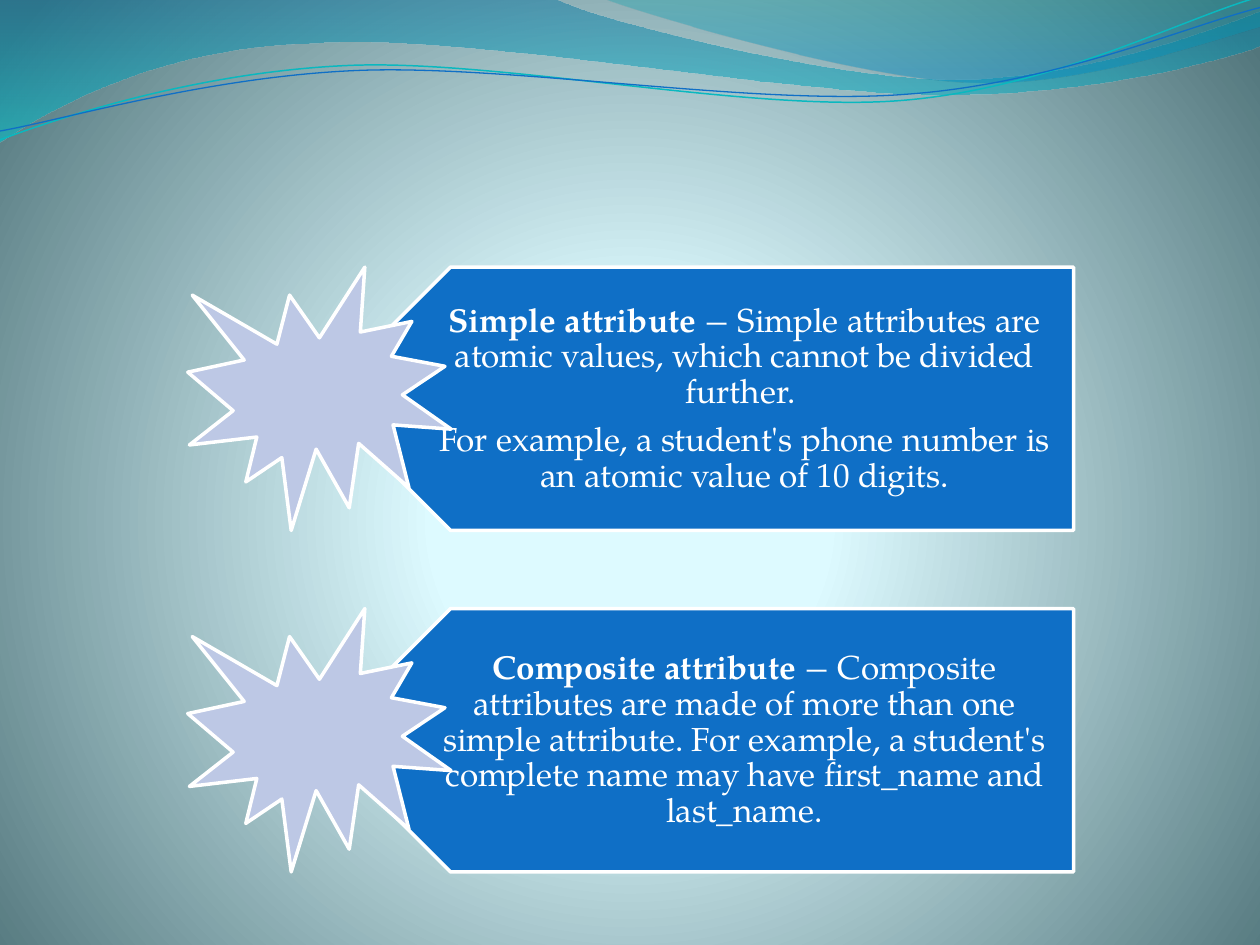
from lxml.etree import SubElement
from pptx import Presentation
from pptx.dml.color import RGBColor
from pptx.enum.shapes import MSO_SHAPE
from pptx.enum.text import MSO_ANCHOR, PP_ALIGN
from pptx.oxml import parse_xml
from pptx.oxml.ns import nsdecls, qn
from pptx.util import Inches, Pt

COLORS = {
    "plate": "0F6FC6", "seal": "BDC8E5", "white": "FFFFFF",
    "teal_line": "0AB8BF", "blue_line": "0F6FC6",
}
FONT = "TeX Gyre Pagella"


def set_gradient(parent, stops, direction):
    """Replace the solid fill in parent; stops are (position %, colour, opacity %)."""
    gradient = parse_xml(f'<a:gradFill {nsdecls("a")} rotWithShape="1"><a:gsLst/>{direction}</a:gradFill>')
    for position, color, opacity in stops:
        stop = SubElement(gradient[0], qn("a:gs"), pos=str(position * 1000))
        rgb = SubElement(stop, qn("a:srgbClr"), val=color)
        if opacity < 100:
            SubElement(rgb, qn("a:alpha"), val=str(opacity * 1000))
    parent.replace(parent.find(qn("a:solidFill")), gradient)


def add_wave(start, segments, close):
    """Segments hold one point for a straight line, three for a Bézier curve."""
    points = [start] + [point for segment in segments for point in segment]
    points = [(Inches(x), Inches(y)) for x, y in points]
    builder = page.shapes.build_freeform(*points[0], scale=1.0)
    builder.add_line_segments(points[1:], close=False)
    wave = builder.convert_to_shape()
    wave.shadow.inherit = False

    # Join each run of three straight steps into one curve
    outline = next(wave._element.iter(qn("a:path")))
    steps = iter(outline.findall(qn("a:lnTo")))
    for segment in segments:
        parts = [next(steps) for _ in segment]
        if len(parts) == 3:
            curve = SubElement(outline, qn("a:cubicBezTo"))
            outline.replace(parts[0], curve)
            for part in parts:
                curve.append(part[0])
            for part in parts[1:]:
                outline.remove(part)
    if close:
        SubElement(outline, qn("a:close"))
    return wave


deck = Presentation()
deck.slide_width, deck.slide_height = Inches(10), Inches(7.5)
page = deck.slides.add_slide(deck.slide_layouts[6])

page.background.fill.solid()
page.background.fill.fore_color.rgb = RGBColor.from_string(COLORS["white"])
set_gradient(
    page.background._cSld.bg.bgPr,
    [(0, "DEFBFF", 100), (25, "DDFAFF", 100), (100, "52767C", 100)],
    '<a:path path="circle"><a:fillToRect l="10000" t="110000" r="10000" b="100000"/></a:path>',
)

# Translucent bands across the top
bands = [
    ((0, 0), [
        [(4.4, -0.01)],
        [(4.76, 0.17), (6.64, 0.63), (7.58, 0.63)],
        [(8.53, 0.63), (9.58, 0.26), (10, 0.09)],
        [(10.01, 0.36)],
        [(9.83, 0.44), (8.7, 0.76), (7.46, 0.75)],
        [(6.22, 0.75), (3.82, 0.28), (2.57, 0.34)],
        [(1.29, 0.36), (0.46, 0.83), (-0.01, 1.13)],
        [(0, 0)],
    ], [(0, "0074A1", 45), (100, "00C6CF", 55)]),
    ((4.79, -0.01), [
        [(5.09, 0.11), (6.82, 0.62), (7.69, 0.65)],
        [(8.56, 0.69), (9.61, 0.32), (10, 0.21)],
        [(10, 0)],
        [(4.79, -0.01)],
    ], [(0, "00A1A9", 30), (80, "008BBF", 45)]),
]
for start, segments, stops in bands:
    band = add_wave(start, segments, close=True)
    band.line.fill.background()
    band.fill.solid()
    set_gradient(band._element.spPr, stops, '<a:lin ang="5400000" scaled="1"/>')

# Thin lines that follow the bands
strands = [
    ((0, 1.11), [
        [(0.48, 0.93), (1.58, 0.57), (2.77, 0.52)],
        [(3.95, 0.47), (5.93, 0.89), (7.13, 0.8)],
        [(8.33, 0.71), (9.38, 0.15), (9.98, -0.02)],
    ], "teal_line", 0.85),
    ((0, 1.04), [
        [(0.47, 0.96), (1.64, 0.61), (2.83, 0.56)],
        [(4.03, 0.51), (5.97, 0.84), (7.17, 0.75)],
        [(8.36, 0.67), (9.41, 0.21), (10, 0.06)],
    ], "blue_line", 0.75),
]
for start, segments, color, width in strands:
    strand = add_wave(start, segments, close=False)
    strand.fill.background()
    strand.line.color.rgb = RGBColor.from_string(COLORS[color])
    strand.line.width = Pt(width)

# Each paragraph is a bold lead and its plain text
attributes = [
    [("Simple attribute", " − Simple attributes are atomic values, which cannot be divided further. "),
     ("", "For example, a student's phone number is an atomic value of 10 digits.")],
    [("Composite attribute", " − Composite attributes are made of more than one simple attribute. "
      "For example, a student's complete name may have first_name and last_name.")],
]
SIZE = 2.09
for row, paragraphs in enumerate(attributes):
    top = 2.12 + row * 2.71
    plate_area = (Inches(2.53), Inches(top), Inches(5.99), Inches(SIZE))
    plate = page.shapes.add_shape(MSO_SHAPE.PENTAGON, *plate_area)
    plate.rotation = 180

    box = page.shapes.add_textbox(*plate_area)
    frame = box.text_frame
    frame.word_wrap = True
    frame.vertical_anchor = MSO_ANCHOR.MIDDLE
    frame.margin_left, frame.margin_right = Inches(0.92), Inches(0.15)
    frame.margin_top = frame.margin_bottom = Inches(0.08)
    for index, (lead, body) in enumerate(paragraphs):
        para = frame.add_paragraph() if index else frame.paragraphs[0]
        para.alignment = PP_ALIGN.CENTER
        para.line_spacing = 0.9
        para.space_after = Pt(6.5)
        para.font.name = FONT
        para.font.size = Pt(19)
        para.font.color.rgb = RGBColor.from_string(COLORS["white"])
        for words, bold in ((lead, True), (body, False)):
            if words:
                span = para.add_run()
                span.text = words
                span.font.bold = bold

    seal = page.shapes.add_shape(MSO_SHAPE.EXPLOSION1, Inches(1.49), Inches(top), Inches(SIZE), Inches(SIZE))
    for shape, color in ((plate, "plate"), (seal, "seal")):
        shape.shadow.inherit = False
        shape.fill.solid()
        shape.fill.fore_color.rgb = RGBColor.from_string(COLORS[color])
        shape.line.color.rgb = RGBColor.from_string(COLORS["white"])
        shape.line.width = Pt(2)

deck.save("out.pptx")
